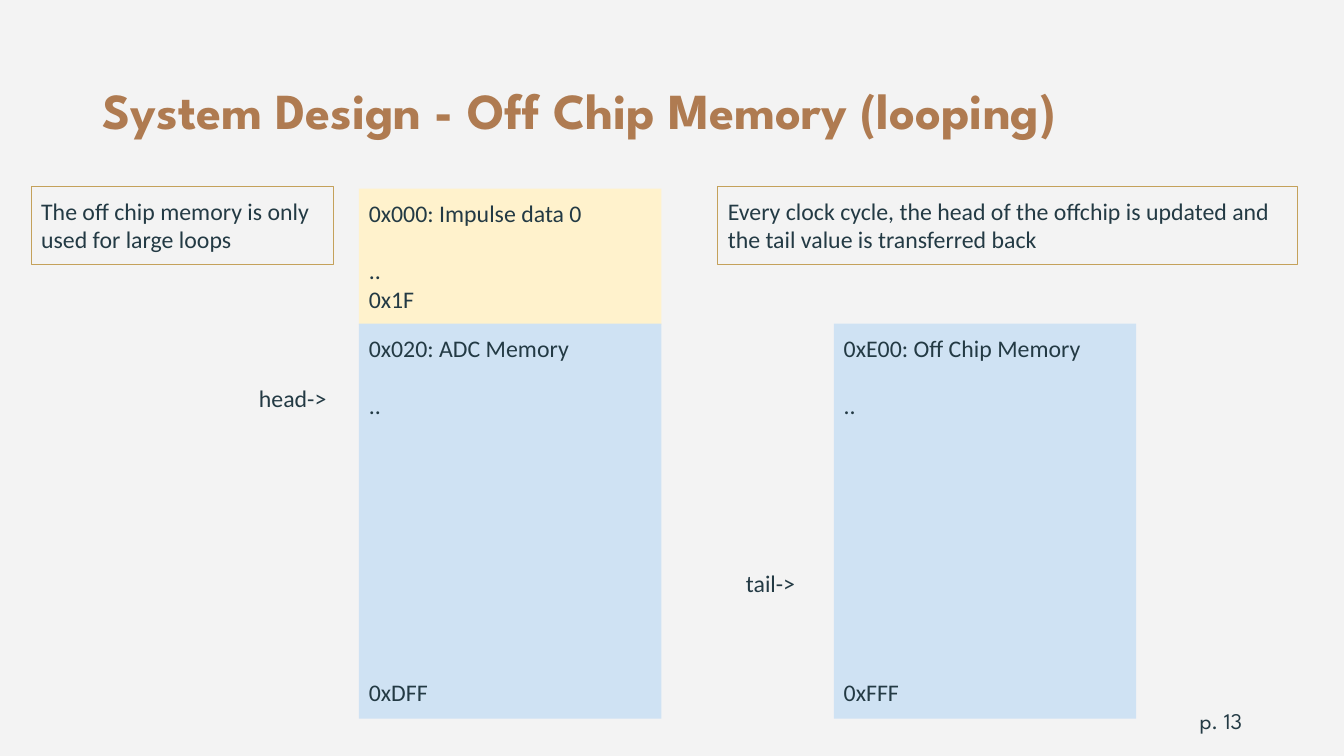
from pptx import Presentation
from pptx.dml.color import RGBColor
from pptx.enum.shapes import MSO_SHAPE
from pptx.enum.text import MSO_ANCHOR, MSO_AUTO_SIZE, PP_ALIGN
from pptx.util import Pt

PX = 9144  # 100 px to the inch
RECTANGLE = MSO_SHAPE.RECTANGLE
TOP, MIDDLE = MSO_ANCHOR.TOP, MSO_ANCHOR.MIDDLE
LEFT, RIGHT = PP_ALIGN.LEFT, PP_ALIGN.RIGHT
FIXED, GROW = MSO_AUTO_SIZE.NONE, MSO_AUTO_SIZE.SHAPE_TO_FIT_TEXT
INK, BROWN, GOLD = "233A44", "AF7B51", "C4A15A"
YELLOW, BLUE, GREY = "FFF2CC", "CFE2F3", "F3F3F3"
LINE_HEIGHT = 20.5  # points, for 17 pt Calibri


def color(value):
    return RGBColor.from_string(value)


def write(box, lines, font="Calibri", size=17, ink=INK, bold=False,
          align=LEFT, anchor=TOP, inset=10, fit=GROW):
    """Fill box with lines, each a pair of text and blank rows above it."""
    frame = box.text_frame
    frame.word_wrap = True
    frame.auto_size = fit
    frame.vertical_anchor = anchor
    frame.margin_left = frame.margin_right = 10 * PX
    frame.margin_top = frame.margin_bottom = inset * PX
    for index, (text, rows_above) in enumerate(lines):
        para = frame.add_paragraph() if index else frame.paragraphs[0]
        para.alignment = align
        para.space_before = Pt(rows_above * LINE_HEIGHT)
        span = para.add_run()
        span.text = text
        span.font.name = font
        span.font.size = Pt(size)
        span.font.bold = bold
        span.font.color.rgb = color(ink)


deck = Presentation()
deck.slide_width, deck.slide_height = 1333 * PX, 750 * PX
page = deck.slides.add_slide(deck.slide_layouts[5])
page.background.fill.solid()
page.background.fill.fore_color.rgb = color(GREY)

title = page.shapes.title
title.left, title.top, title.width, title.height = 92 * PX, 40 * PX, 1150 * PX, 145 * PX
write(title, [("System Design - Off Chip Memory (looping)", 0)], "League Spartan",
      36, BROWN, bold=True, anchor=MIDDLE, inset=5, fit=FIXED)
title.text_frame.paragraphs[0].line_spacing = 0.9

page_number = page.shapes.add_textbox(942 * PX, 695 * PX, 300 * PX, 40 * PX)
write(page_number, [("p. 13", 0)], "League Spartan", 16,
      align=RIGHT, anchor=MIDDLE, inset=5, fit=FIXED)

# Memory blocks: left, top, height, fill, lines
memory_blocks = [
    (356, 187, 135, YELLOW, [("0x000: Impulse data 0", 0), ("..", 1), ("0x1F", 0)]),
    (356, 321, 392, BLUE, [("0x020: ADC Memory", 0), ("..", 1), ("0xDFF", 9)]),
    (827, 321, 392, BLUE, [("0xE00: Off Chip Memory", 0), ("..", 1), ("0xFFF", 9)]),
]
for left, top, height, fill, lines in memory_blocks:
    block = page.shapes.add_shape(RECTANGLE, left * PX, top * PX, 300 * PX, height * PX)
    block.shadow.inherit = False
    block.fill.solid()
    block.fill.fore_color.rgb = color(fill)
    block.line.fill.background()
    write(block, lines)

for left, top, text in [(247, 371, "head->"), (730, 554, "tail->")]:
    pointer = page.shapes.add_textbox(left * PX, top * PX, 97 * PX, 49 * PX)
    write(pointer, [(text, 0)])

notes = [
    (31, 300, "The off chip memory is only used for large loops"),
    (712, 575, "Every clock cycle, the head of the offchip is updated and "
               "the tail value is transferred back"),
]
for left, width, text in notes:
    note = page.shapes.add_shape(RECTANGLE, left * PX, 185 * PX, width * PX, 77 * PX)
    note.shadow.inherit = False
    note.fill.background()
    note.line.color.rgb = color(GOLD)
    note.line.width = Pt(0.75)
    write(note, [(text, 0)])

deck.save("out.pptx")
